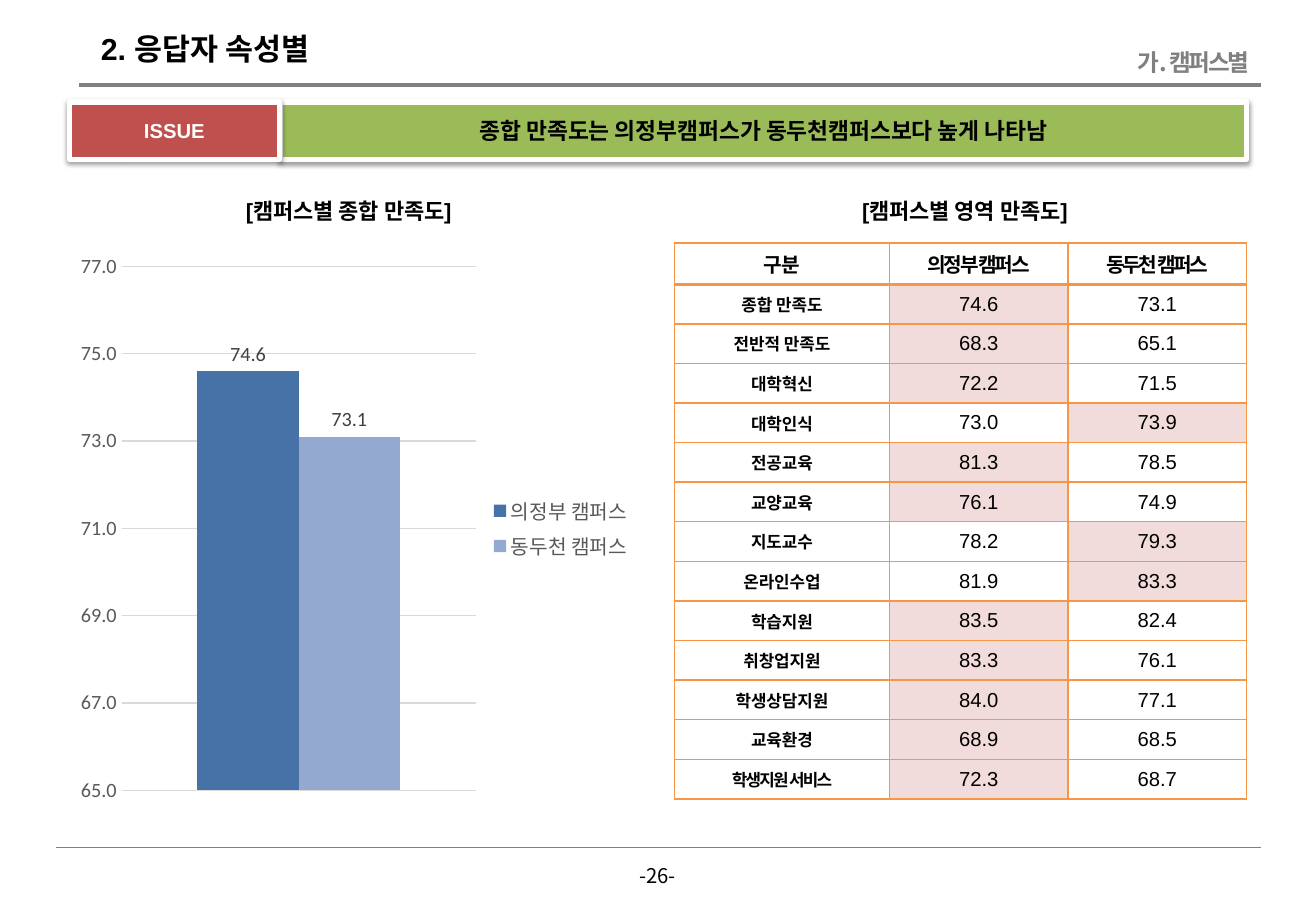
"""Build the slide on satisfaction by campus with a column chart and a table."""
from lxml import etree
from pptx import Presentation
from pptx import util as u
from pptx.chart import data
from pptx.dml.color import RGBColor
from pptx.enum import chart as ch, shapes, text
from pptx.oxml import parse_xml
from pptx.oxml.ns import nsdecls, qn

PX = 9144
BLACK = RGBColor(0x00, 0x00, 0x00)
WHITE = RGBColor(0xFF, 0xFF, 0xFF)
GRAY = RGBColor(0x80, 0x80, 0x80)
GREEN = RGBColor(0x9B, 0xBB, 0x59)
RED = RGBColor(0xC0, 0x50, 0x4D)
ORANGE = RGBColor(0xF7, 0x96, 0x46)
PINK = RGBColor(0xF2, 0xDC, 0xDB)
GRID = RGBColor(0xD9, 0xD9, 0xD9)
AXIS_TEXT = RGBColor(0x59, 0x59, 0x59)
LABEL_TEXT = RGBColor(0x40, 0x40, 0x40)
BLUES = [RGBColor(0x46, 0x72, 0xA8), RGBColor(0x93, 0xA9, 0xCF)]
KOREAN = "Noto Sans CJK KR"
CENTER = text.PP_ALIGN.CENTER
MIDDLE = text.MSO_ANCHOR.MIDDLE


def write(frame, words, size, color=BLACK, bold=True, align=CENTER, name="Arial", spacing=0):
    """Fill a text frame with one formatted paragraph."""
    line = frame.paragraphs[0]
    line.text = words
    line.alignment = align
    line.space_before = u.Pt(0)
    font = line.font
    font.size, font.bold, font.name = u.Pt(size), bold, name
    font.color.rgb = color
    props = line._p.pPr.find(qn("a:defRPr"))
    props.find(qn("a:latin")).addnext(parse_xml(f'<a:ea {nsdecls("a")} typeface="{KOREAN}"/>'))
    if spacing:
        props.set("spc", str(round(spacing * 100)))


def place(shape, left, top, width, height):
    """Move and size a shape in px."""
    shape.left, shape.top = left * PX, top * PX
    shape.width, shape.height = width * PX, height * PX


prs = Presentation()
prs.slide_width, prs.slide_height = 1083 * PX, 750 * PX
slide = prs.slides.add_slide(prs.slide_layouts[0])

for left, y, weight in [(65, 70, 2), (46, 698, 0.5)]:
    rule = slide.shapes.add_connector(
        shapes.MSO_CONNECTOR.STRAIGHT, left * PX, y * PX, 1038 * PX, y * PX)
    rule.line.color.rgb = GRAY
    rule.line.width = u.Pt(weight)
    etree.SubElement(rule._element.spPr, qn("a:effectLst"))

title, section = slide.placeholders
place(title, 73, 20, 214, 40)
title.text_frame.word_wrap = False
title.text_frame.vertical_anchor = MIDDLE
title.text_frame.auto_size = text.MSO_AUTO_SIZE.NONE
write(title.text_frame, "2. 응답자 속성별", 18, align=text.PP_ALIGN.LEFT)
place(section, 837, 34, 201, 34)
section.text_frame.vertical_anchor = text.MSO_ANCHOR.TOP
section.text_frame.auto_size = text.MSO_AUTO_SIZE.NONE
write(section.text_frame, "가. 캠퍼스별", 14, GRAY, align=text.PP_ALIGN.RIGHT,
      name=KOREAN, spacing=-1.5)

for left, width, fill, color, size, words in [
        (231, 795, GREEN, BLACK, 13.5, "종합 만족도는 의정부캠퍼스가 동두천캠퍼스보다 높게 나타남"),
        (57, 173, RED, WHITE, 12, "ISSUE")]:
    banner = slide.shapes.add_shape(shapes.MSO_SHAPE.RECTANGLE, 0, 0, 0, 0)
    place(banner, left, 84, width, 47)
    banner.fill.solid()
    banner.fill.fore_color.rgb = fill
    banner.line.color.rgb = WHITE
    banner.line.width = u.Pt(3)
    banner._element.spPr.append(parse_xml(
        f'<a:effectLst {nsdecls("a")}><a:outerShdw blurRad="39370" dist="20320" dir="5400000" '
        'rotWithShape="0"><a:srgbClr val="000000"><a:alpha val="38000"/></a:srgbClr>'
        '</a:outerShdw></a:effectLst>'))
    banner.text_frame.vertical_anchor = MIDDLE
    write(banner.text_frame, words, size, color)

for left, top, width, height, words, size, bold, name in [
        (552, 158, 484, 32, "[캠퍼스별 영역 만족도]", 13, True, "Arial"),
        (45, 158, 484, 32, "[캠퍼스별 종합 만족도]", 13, True, "Arial"),
        (515, 706, 52, 30, "-26-", 12, False, KOREAN)]:
    caption = slide.shapes.add_textbox(left * PX, top * PX, width * PX, height * PX)
    caption.text_frame.word_wrap = True
    write(caption.text_frame, words, size, bold=bold, name=name)

campuses = ["의정부 캠퍼스", "동두천 캠퍼스"]
scores = [
    ("종합 만족도", 74.6, 73.1), ("전반적 만족도", 68.3, 65.1), ("대학혁신", 72.2, 71.5),
    ("대학인식", 73.0, 73.9), ("전공교육", 81.3, 78.5), ("교양교육", 76.1, 74.9),
    ("지도교수", 78.2, 79.3), ("온라인수업", 81.9, 83.3), ("학습지원", 83.5, 82.4),
    ("취창업지원", 83.3, 76.1), ("학생상담지원", 84.0, 77.1), ("교육환경", 68.9, 68.5),
    ("학생지원 서비스", 72.3, 68.7)]

table = slide.shapes.add_table(
    len(scores) + 1, 3, 555 * PX, 200 * PX, 471 * PX, 458 * PX).table
table.first_row = table.horz_banding = False
for column, width in zip(table.columns, [177, 147, 147]):
    column.width = width * PX
for r, row in enumerate([("구분", *campuses)] + scores):
    table.rows[r].height = 34 * PX if r == 0 else round((458 - 34) / len(scores) * PX)
    for c, value in enumerate(row):
        cell = table.cell(r, c)
        cell.vertical_anchor = MIDDLE
        side, edge = (4, 4) if c == 0 else (10, 5) if r == 0 else (1, 1)
        cell.margin_left = cell.margin_right = side * PX
        cell.margin_top = cell.margin_bottom = edge * PX
        if r and c:
            write(cell.text_frame, f"{value:.1f}", 12, bold=False)
        else:
            spacing = -1.4 if c else -1 if value == "학생지원 서비스" else 0
            write(cell.text_frame, value, 10 if r else 12, spacing=spacing)
        for border in ["lnL", "lnR", "lnT", "lnB"]:
            heavy = (r == 0 and border == "lnB") or (r == 1 and border == "lnT")
            cell._tc.get_or_add_tcPr().append(parse_xml(
                f'<a:{border} {nsdecls("a")} w="{u.Pt(2 if heavy else 1)}"><a:solidFill>'
                f'<a:srgbClr val="{ORANGE}"/></a:solidFill></a:{border}>'))
        if r and c and value == max(row[1:]):
            cell.fill.solid()
            cell.fill.fore_color.rgb = PINK
        else:
            cell.fill.background()

overall = data.CategoryChartData(number_format="###0.0")
overall.categories = ["1"]
for campus, score in zip(campuses, scores[0][1:]):
    overall.add_series(campus, [score])
chart = slide.shapes.add_chart(
    ch.XL_CHART_TYPE.COLUMN_CLUSTERED, 57 * PX, 200 * PX, 473 * PX, 470 * PX, overall).chart
chart.has_title = False
chart.font.size, chart.font.name = u.Pt(10), "Calibri"
chart.font.color.rgb = BLACK
chart.has_legend = True
chart.legend.position = ch.XL_LEGEND_POSITION.RIGHT
chart.legend.include_in_layout = False
chart.category_axis.visible = False
axis = chart.value_axis
axis.minimum_scale, axis.maximum_scale, axis.major_unit = 65, 77, 2
axis.major_tick_mark = ch.XL_TICK_MARK.NONE
axis.format.line.fill.background()
axis.major_gridlines.format.line.color.rgb = GRID
axis.major_gridlines.format.line.width = u.Pt(0.75)
axis.tick_labels.number_format = "###0.0"
axis.tick_labels.number_format_is_linked = False
plot = chart.plots[0]
plot.gap_width, plot.overlap, plot.vary_by_categories = 150, 0, False
chart_fonts = [(chart.legend.font, AXIS_TEXT), (axis.tick_labels.font, AXIS_TEXT)]
for series, blue in zip(plot.series, BLUES):
    series.format.fill.solid()
    series.format.fill.fore_color.rgb = blue
    labels = series.data_labels
    labels.show_value = True
    labels.position = ch.XL_LABEL_POSITION.OUTSIDE_END
    chart_fonts.append((labels.font, LABEL_TEXT))
for font, color in chart_fonts:
    font.size, font.name = u.Pt(12), "Calibri"
    font.color.rgb = color

prs.save("out.pptx")
